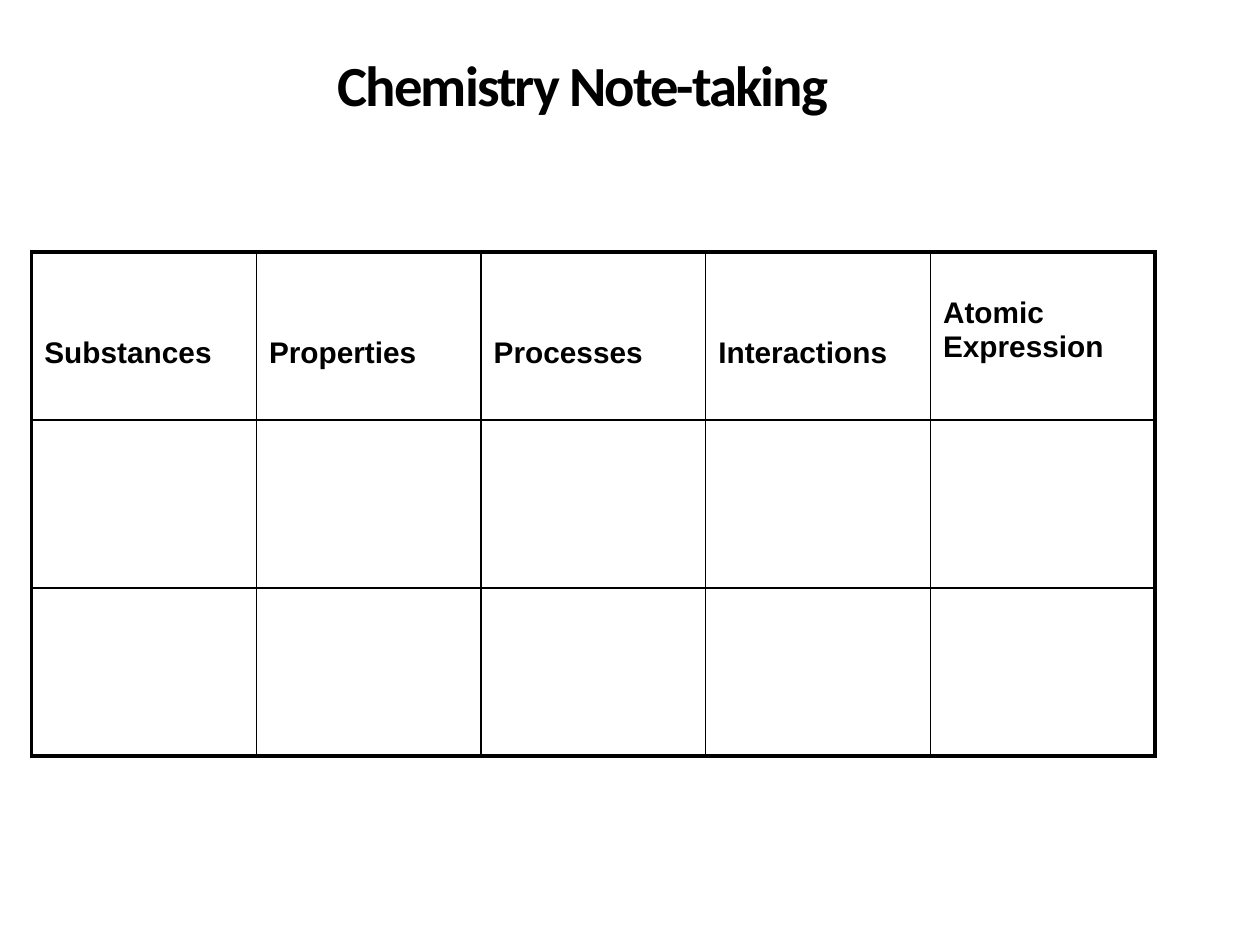
from lxml.etree import SubElement
from pptx import Presentation
from pptx.dml.color import RGBColor
from pptx.enum.text import MSO_ANCHOR as Anchor, MSO_AUTO_SIZE as AutoSize, PP_ALIGN as Align
from pptx.oxml.ns import qn
from pptx.util import Cm, Pt

BLACK = RGBColor(0, 0, 0)
THIN, THICK = Pt(1), Pt(2.25)
HEADERS = ["Substances", "Properties", "Processes", "Interactions", "Atomic Expression"]
ROWS = 3
ONE_LINE_TOP, TWO_LINE_TOP = Cm(1.71), Cm(0.9)


def format_runs(para, font_name, size):
    for span in para.runs:
        span.font.name = font_name
        span.font.size = size
        span.font.bold = True
        span.font.color.rgb = BLACK


def add_title(page, left, top, width, height):
    title = page.shapes.title
    title.left, title.top, title.width, title.height = left, top, width, height
    frame = title.text_frame
    frame.text = "Chemistry Note-taking"
    frame.word_wrap = True
    frame.auto_size = AutoSize.NONE
    frame.vertical_anchor = Anchor.MIDDLE
    frame.margin_left = frame.margin_right = Cm(0.64)
    frame.margin_top = frame.margin_bottom = Cm(0.64)
    para = frame.paragraphs[0]
    para.alignment = Align.CENTER
    para.line_spacing = 0.85
    format_runs(para, "Calibri", Pt(32.4))
    for span in para.runs:
        span.font._element.set("spc", "-110")


def set_borders(cell, row, column):
    outer_sides = {
        "a:lnL": column == 0,
        "a:lnR": column == len(HEADERS) - 1,
        "a:lnT": row == 0,
        "a:lnB": row == ROWS - 1,
    }
    properties = cell._tc.get_or_add_tcPr()
    for side, is_outer in outer_sides.items():
        line = SubElement(properties, qn(side), w=str(THICK if is_outer else THIN))
        fill = SubElement(line, qn("a:solidFill"))
        SubElement(fill, qn("a:srgbClr"), val=str(BLACK))


def add_notes_table(page, left, top, width, height):
    table = page.shapes.add_table(ROWS, len(HEADERS), left, top, width, height).table
    table.first_row = False
    table.horz_banding = False
    for row in range(ROWS):
        for column in range(len(HEADERS)):
            cell = table.cell(row, column)
            set_borders(cell, row, column)
            cell.fill.background()
    for column, header in enumerate(HEADERS):
        cell = table.cell(0, column)
        cell.text_frame.text = header
        cell.margin_top = TWO_LINE_TOP if " " in header else ONE_LINE_TOP
        format_runs(cell.text_frame.paragraphs[0], "Arial", Pt(17))


def main():
    deck = Presentation()
    deck.slide_width, deck.slide_height = Cm(25.4), Cm(19.05)
    page = deck.slides.add_slide(deck.slide_layouts[5])
    add_title(page, Cm(1.27), Cm(-0.43), Cm(20.96), Cm(4.45))
    add_notes_table(page, Cm(0.64), Cm(5.08), Cm(22.65), Cm(10.16))
    deck.save("out.pptx")


if __name__ == "__main__":
    main()
